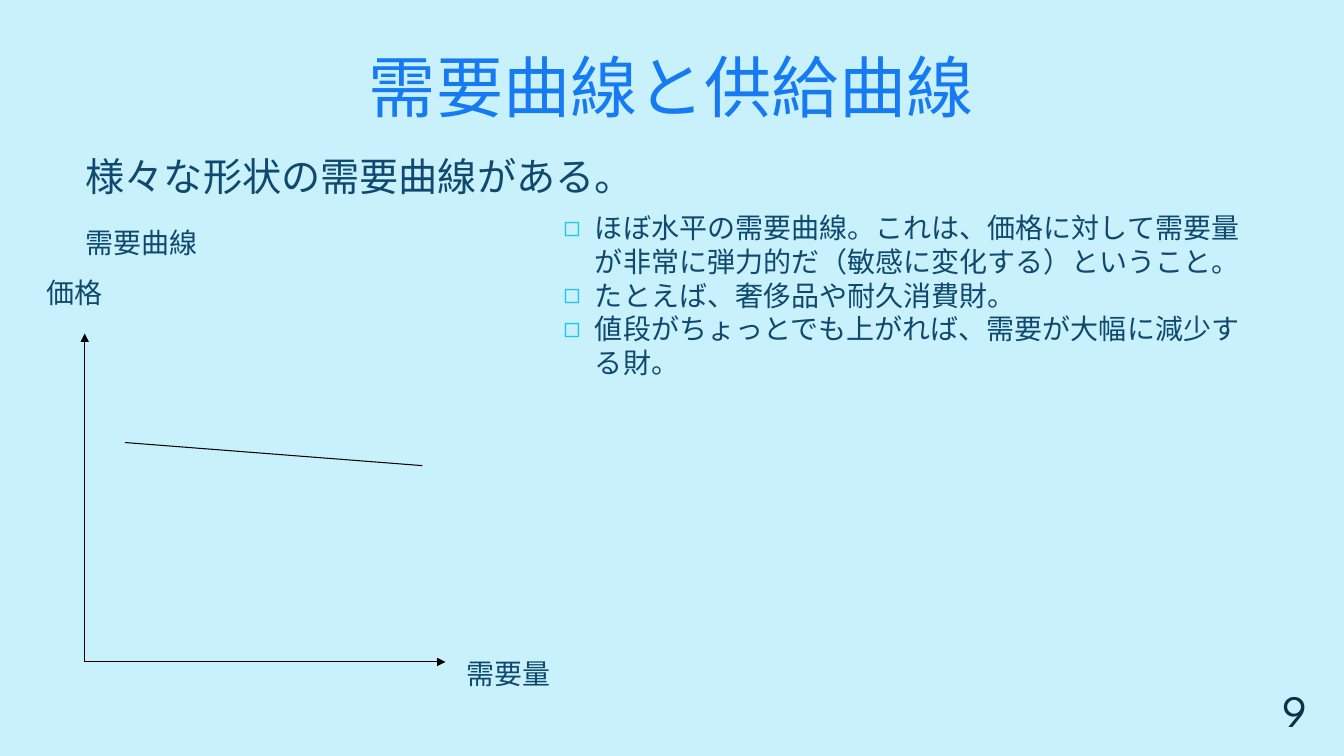
"""Build the slide on demand curves with a nearly flat example."""
import pptx
import pptx.dml.color
import pptx.enum.shapes
import pptx.enum.text
import pptx.oxml
import pptx.oxml.ns
import pptx.util

Pt = pptx.util.Pt
ALIGN = pptx.enum.text.PP_ALIGN
ANCHOR = pptx.enum.text.MSO_ANCHOR
FONT = "League Spartan"
COLORS = {
    "background": "C8F1FB",
    "title": "167BF3",
    "text": "0F496F",
    "number": "0A304A",
    "bullet": "22C5ED",
    "line": "000000",
}
ORIGIN = (60.5, 472.8)
PRICE_END = (60.5, 238.3)
QUANTITY_END = (318.2, 472.8)
CURVE = ((89.3, 316.1), (301.7, 332.6))


def rgb(name):
    """Return a named colour."""
    return pptx.dml.color.RGBColor.from_string(COLORS[name])


def add_xml(parent, tag, content="", **values):
    """Append a drawing element with attributes to a parent."""
    attributes = "".join(f' {key}="{value}"' for key, value in values.items())
    namespace = pptx.oxml.ns.nsdecls("a")
    parent.append(pptx.oxml.parse_xml(f"<a:{tag} {namespace}{attributes}>{content}</a:{tag}>"))


def place(shape, left, top, width, height, anchor=ANCHOR.TOP):
    """Move a text shape and set up its frame."""
    for name, value in dict(left=left, top=top, width=width, height=height).items():
        setattr(shape, name, Pt(value))
    settings = dict(word_wrap=True, auto_size=pptx.enum.text.MSO_AUTO_SIZE.NONE,
                    vertical_anchor=anchor, margin_left=Pt(7.2), margin_right=Pt(7.2),
                    margin_top=Pt(3.6), margin_bottom=Pt(3.6))
    for name, value in settings.items():
        setattr(shape.text_frame, name, value)
    return shape.text_frame


def write(frame, text, size, color="text", align=ALIGN.LEFT, before=0, after=0,
          indent=0, bullet=None):
    """Write one paragraph, using the empty first one if there is one."""
    para = frame.paragraphs[0] if not frame.text else frame.add_paragraph()
    layout = dict(alignment=align, space_before=Pt(before), space_after=Pt(after))
    for name, value in layout.items():
        setattr(para, name, value)
    span = para.add_run()
    span.text = text
    for name, value in dict(name=FONT, size=Pt(size), bold=False).items():
        setattr(span.font, name, value)
    span.font.color.rgb = rgb(color)
    properties = para._p.get_or_add_pPr()
    properties.set("marL", str(Pt(indent)))
    properties.set("indent", str(-Pt(indent) if bullet else 0))
    if bullet:
        add_xml(properties, "buClr", f'<a:srgbClr val="{COLORS["bullet"]}"/>')
        add_xml(properties, "buChar", char=bullet)
    else:
        add_xml(properties, "buNone")


def add_line(page, start, end, arrow=False):
    """Draw a thin straight line, with an arrowhead at its end if asked."""
    line = page.shapes.add_connector(pptx.enum.shapes.MSO_CONNECTOR.STRAIGHT,
                                     *(Pt(value) for value in start + end))
    line.line.color.rgb = rgb("line")
    line.line.width = Pt(0.75)
    if arrow:
        add_xml(line.line._get_or_add_ln(), "tailEnd", type="triangle")
    add_xml(line._element.spPr, "effectLst")


def main():
    """Build and save the slide."""
    deck = pptx.Presentation()
    deck.slide_width, deck.slide_height = Pt(960), Pt(540)
    page = deck.slides.add_slide(deck.slide_layouts[3])
    page.background.fill.solid()
    page.background.fill.fore_color.rgb = rgb("background")
    title, chart_labels, notes = page.placeholders

    frame = place(title, 26, 26, 907, 67.5, ANCHOR.BOTTOM)
    write(frame, "需要曲線と供給曲線", 48, "title", ALIGN.CENTER)

    frame = place(chart_labels, 26, 105, 907, 404)
    write(frame, "様々な形状の需要曲線がある。", 28, after=6, indent=28)
    write(frame, "需要曲線", 20, before=13, after=6, indent=28)
    write(frame, "価格", 20, before=5.6, after=6)
    write(frame, "需要量", 20, before=242, indent=300)

    number = page.shapes.add_textbox(0, 0, 0, 0)
    frame = place(number, 887, 485.3, 54, 44, ANCHOR.BOTTOM)
    write(frame, "9", 32, "number", ALIGN.RIGHT)

    add_line(page, ORIGIN, PRICE_END, arrow=True)
    add_line(page, ORIGIN, QUANTITY_END, arrow=True)
    add_line(page, *CURVE)

    frame = place(notes, 395.3, 147, 502, 128)
    for text in (
        "ほぼ水平の需要曲線。これは、価格に対して需要量が非常に弾力的だ（敏感に変化する）ということ。",
        "たとえば、奢侈品や耐久消費財。",
        "値段がちょっとでも上がれば、需要が大幅に減少する財。",
    ):
        write(frame, text, 20, indent=22.5, bullet="◻")

    deck.save("out.pptx")


if __name__ == "__main__":
    main()
